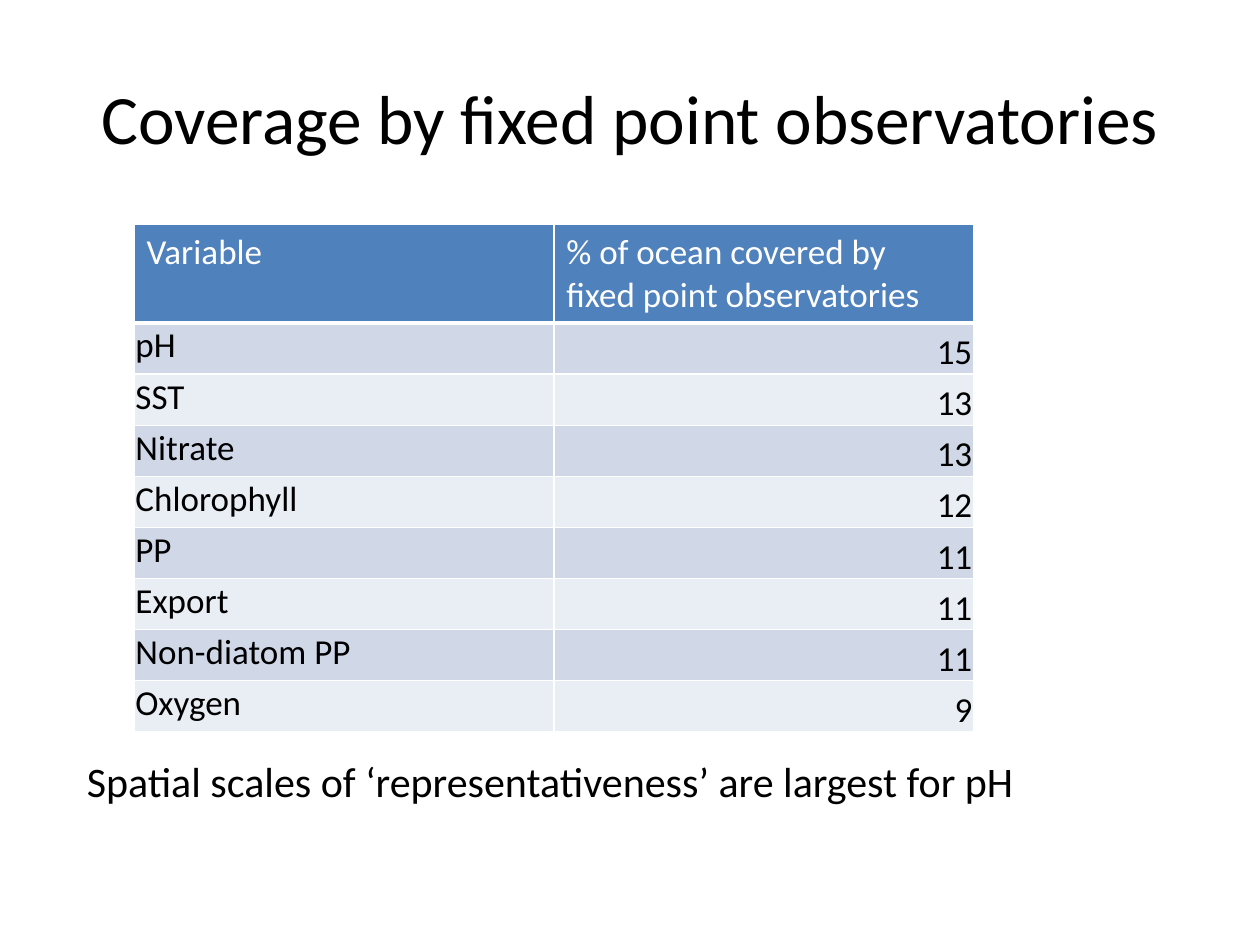
from dataclasses import dataclass

from lxml import etree
from pptx import Presentation
from pptx.dml.color import RGBColor
from pptx.enum.text import MSO_ANCHOR, MSO_AUTO_SIZE, PP_ALIGN
from pptx.oxml.ns import qn
from pptx.util import Cm, Pt

LEFT, CENTER, RIGHT = PP_ALIGN.LEFT, PP_ALIGN.CENTER, PP_ALIGN.RIGHT
TOP, MIDDLE, BOTTOM = MSO_ANCHOR.TOP, MSO_ANCHOR.MIDDLE, MSO_ANCHOR.BOTTOM
FIT_SHAPE = MSO_AUTO_SIZE.SHAPE_TO_FIT_TEXT
TITLE_ONLY = 5

HEADERS = ("Variable", "% of ocean covered by fixed point observatories")
COVERAGE = (
    ("pH", 15),
    ("SST", 13),
    ("Nitrate", 13),
    ("Chlorophyll", 12),
    ("PP", 11),
    ("Export", 11),
    ("Non-diatom PP", 11),
    ("Oxygen", 9),
)


@dataclass(frozen=True)
class Theme:
    font: str = "Calibri"
    text: str = "000000"
    header_text: str = "FFFFFF"
    header_fill: str = "4F81BD"
    bands: tuple = ("D0D8E8", "E9EDF4")
    border: str = "FFFFFF"
    title_size: float = 39.6
    table_size: float = 20
    note_size: float = 24


class SlideBuilder:
    def __init__(self, slide, theme):
        self.slide = slide
        self.theme = theme

    def set_text(self, text_frame, text, size, color, alignment=LEFT):
        text_frame.text = text
        paragraph = text_frame.paragraphs[0]
        paragraph.alignment = alignment
        for run in paragraph.runs:
            run.font.name = self.theme.font
            run.font.size = Pt(size)
            run.font.bold = False
            run.font.color.rgb = RGBColor.from_string(color)

    def place_title(self, text, left, top, width, height):
        title = self.slide.shapes.title
        title.left, title.top = Cm(left), Cm(top)
        title.width, title.height = Cm(width), Cm(height)
        title.text_frame.vertical_anchor = MIDDLE
        self.set_text(title.text_frame, text, self.theme.title_size, self.theme.text, CENTER)

    def add_note(self, text, left, top, width, height):
        box = self.slide.shapes.add_textbox(Cm(left), Cm(top), Cm(width), Cm(height))
        box.text_frame.word_wrap = True
        box.text_frame.auto_size = FIT_SHAPE
        self.set_text(box.text_frame, text, self.theme.note_size, self.theme.text)

    def style_cell(self, cell, fill, bottom_border=1):
        properties = cell._tc.get_or_add_tcPr()
        for side, points in (("L", 1), ("R", 1), ("T", 1), ("B", bottom_border)):
            line = etree.SubElement(properties, qn(f"a:ln{side}"), w=str(Pt(points)))
            solid = etree.SubElement(line, qn("a:solidFill"))
            etree.SubElement(solid, qn("a:srgbClr"), val=self.theme.border)
        cell.fill.solid()
        cell.fill.fore_color.rgb = RGBColor.from_string(fill)

    def add_table(self, headers, records, left, top, width, header_height, row_height):
        theme = self.theme
        height = header_height + row_height * len(records)
        table = self.slide.shapes.add_table(
            len(records) + 1, len(headers), Cm(left), Cm(top), Cm(width), Cm(height)
        ).table
        for row in table.rows:
            row.height = Cm(row_height)
        table.rows[0].height = Cm(header_height)

        for column, header in enumerate(headers):
            cell = table.cell(0, column)
            self.style_cell(cell, theme.header_fill, bottom_border=3)
            self.set_text(cell.text_frame, header, theme.table_size, theme.header_text)

        column_styles = ((LEFT, TOP), (RIGHT, BOTTOM))
        for index, record in enumerate(records):
            for column, (value, style) in enumerate(zip(record, column_styles)):
                alignment, anchor = style
                cell = table.cell(index + 1, column)
                self.style_cell(cell, theme.bands[index % 2])
                cell.margin_left = cell.margin_right = cell.margin_top = Cm(0.03)
                cell.margin_bottom = 0
                cell.vertical_anchor = anchor
                self.set_text(
                    cell.text_frame, str(value), theme.table_size, theme.text, alignment
                )


def main():
    presentation = Presentation()
    presentation.slide_width, presentation.slide_height = Cm(25.4), Cm(19.05)
    slide = presentation.slides.add_slide(presentation.slide_layouts[TITLE_ONLY])
    builder = SlideBuilder(slide, Theme())
    builder.place_title("Coverage by fixed point observatories", 1.27, 0.76, 22.86, 3.18)
    builder.add_table(HEADERS, COVERAGE, 2.7, 4.53, 16.93, header_height=1.98, row_height=1.03)
    builder.add_note(
        "Spatial scales of ‘representativeness’ are largest for pH", 1.5, 15.11, 23.19, 1.27
    )
    presentation.save("out.pptx")


if __name__ == "__main__":
    main()
